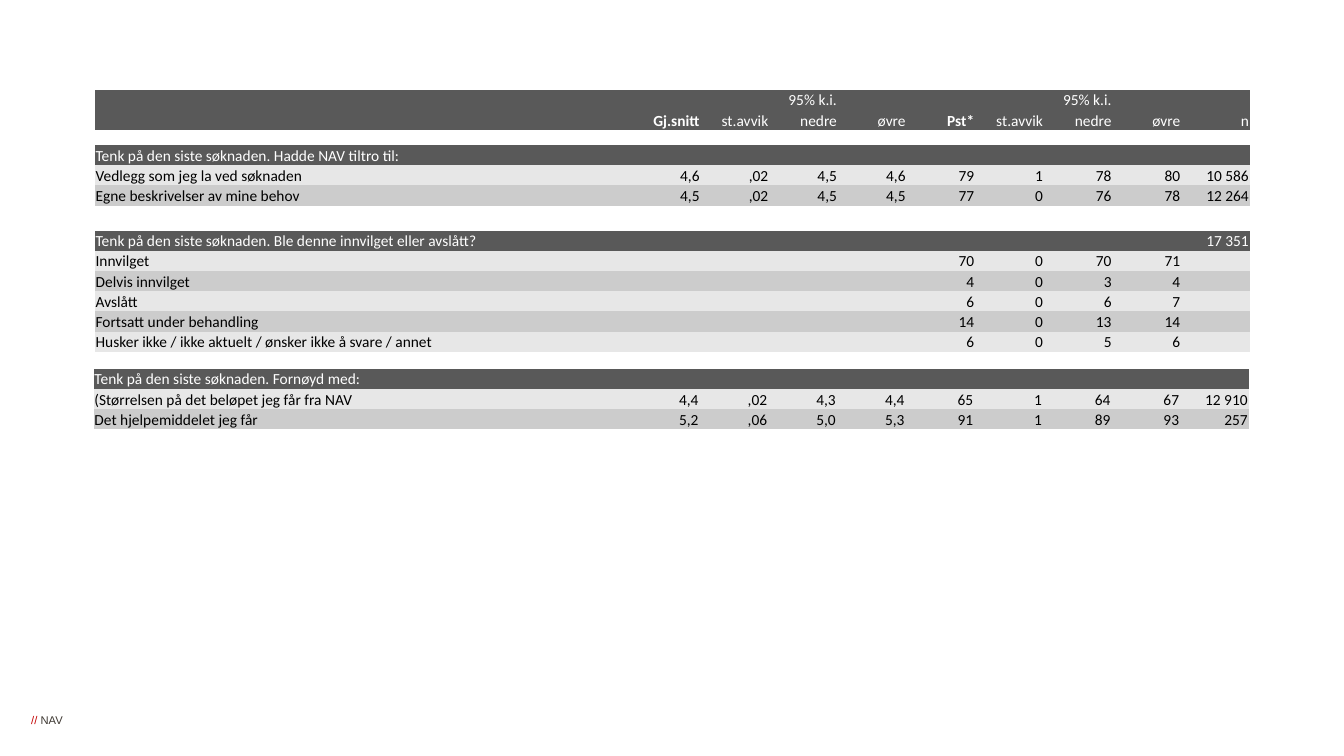
from pptx import Presentation
from pptx.dml.color import RGBColor
from pptx.enum.text import MSO_ANCHOR, PP_ALIGN
from pptx.util import Pt

COLORS = {"dark": "595959", "light": "E7E7E7", "mid": "CCCCCC", "white": "FFFFFF",
          "black": "000000", "red": "C30000", "brown": "3E3832"}
NO_GRID = "{2D5ABB26-0587-4C30-8999-92F81FD0307C}"
FOOTER = [("// ", "red"), ("NAV", "brown")]
BOLD = ("Gj.snitt", "Pst*")

TABLES = [
    {"left": 67.6, "top": 64.3, "dark_rows": 2, "rows": [
        ("", "", "", "95% k.i.", "", "", "", "95% k.i.", "", ""),
        ("", "Gj.snitt", "st.avvik", "nedre", "øvre", "Pst*", "st.avvik", "nedre", "øvre", "n"),
    ]},
    {"left": 67.6, "top": 103.6, "dark_rows": 1, "rows": [
        ("Tenk på den siste søknaden. Hadde NAV tiltro til:", ""),
        ("Vedlegg som jeg la ved søknaden", "4,6", ",02", "4,5", "4,6", "79", "1", "78", "80", "10 586"),
        ("Egne beskrivelser av mine behov", "4,5", ",02", "4,5", "4,5", "77", "0", "76", "78", "12 264"),
    ]},
    {"left": 67.6, "top": 164.9, "dark_rows": 1, "rows": [
        ("Tenk på den siste søknaden. Ble denne innvilget eller avslått?", "17 351"),
        ("Innvilget", "", "", "", "", "70", "0", "70", "71", ""),
        ("Delvis innvilget", "", "", "", "", "4", "0", "3", "4", ""),
        ("Avslått", "", "", "", "", "6", "0", "6", "7", ""),
        ("Fortsatt under behandling", "", "", "", "", "14", "0", "13", "14", ""),
        ("Husker ikke / ikke aktuelt / ønsker ikke å svare / annet", "", "", "", "", "6", "0", "5", "6", ""),
    ]},
    {"left": 66.8, "top": 263.5, "dark_rows": 1, "rows": [
        ("Tenk på den siste søknaden. Fornøyd med:", ""),
        ("(Størrelsen på det beløpet jeg får fra NAV", "4,4", ",02", "4,3", "4,4", "65", "1", "64", "67", "12 910"),
        ("Det hjelpemiddelet jeg får", "5,2", ",06", "5,0", "5,3", "91", "1", "89", "93", "257"),
    ]},
]
COLS = [383.8] + [49.04] * 9
ROW_H = 14.4
CELL = {"margin_left": Pt(0.7), "margin_right": Pt(0.7), "margin_top": Pt(0.7),
        "margin_bottom": 0, "vertical_anchor": MSO_ANCHOR.BOTTOM}


def rgb(name):
    return RGBColor.from_string(COLORS[name])


def set_all(obj, values):
    for key, value in values.items():
        setattr(obj, key, value)


def add_run(p, text, color, **font):
    r = p.add_run()
    r.text = text
    set_all(r.font, font)
    r.font.color.rgb = rgb(color)


def fill_cell(cell, text, fill, color, align):
    set_all(cell, CELL)
    cell.fill.solid()
    cell.fill.fore_color.rgb = rgb(fill)
    p = cell.text_frame.paragraphs[0]
    p.alignment = align
    if text:
        add_run(p, text, color, name="Calibri", size=Pt(11), bold=text in BOLD)
    else:
        p._p.get_or_add_endParaRPr().set("sz", "1100")


def add_result_table(s, left, top, dark_rows, rows):
    frame = s.shapes.add_table(len(rows), len(COLS), Pt(left), Pt(top),
                               Pt(sum(COLS)), Pt(ROW_H * len(rows)))
    tbl = frame.table
    set_all(tbl, {"first_row": False, "horz_banding": False})
    tbl._tbl.tblPr[0].text = NO_GRID
    for col, width in zip(tbl.columns, COLS):
        col.width = Pt(width)
    for i, row in enumerate(rows):
        tbl.rows[i].height = Pt(ROW_H)
        dark = i < dark_rows
        fill = "dark" if dark else ("mid", "light")[i % 2]
        if len(row) == 2:
            tbl.cell(i, 1).merge(tbl.cell(i, len(COLS) - 1))
        padded = row + ("",) * (len(COLS) - len(row))
        for j, text in enumerate(padded):
            fill_cell(tbl.cell(i, j), text, fill, "white" if dark else "black",
                      PP_ALIGN.RIGHT if j else PP_ALIGN.LEFT)


def main():
    prs = Presentation()
    set_all(prs, {"slide_width": Pt(960), "slide_height": Pt(540)})
    s = prs.slides.add_slide(prs.slide_layouts[6])
    tf = s.shapes.add_textbox(Pt(19.4), Pt(509.8), Pt(28.5), Pt(9.4)).text_frame
    set_all(tf, {"margin_left": Pt(2.9), "margin_right": 0, "margin_top": 0,
                 "margin_bottom": 0, "word_wrap": True})
    for text, color in FOOTER:
        add_run(tf.paragraphs[0], text, color, name="Arial", size=Pt(8))
    for table in TABLES:
        add_result_table(s, **table)
    prs.save("out.pptx")


if __name__ == "__main__":
    main()
